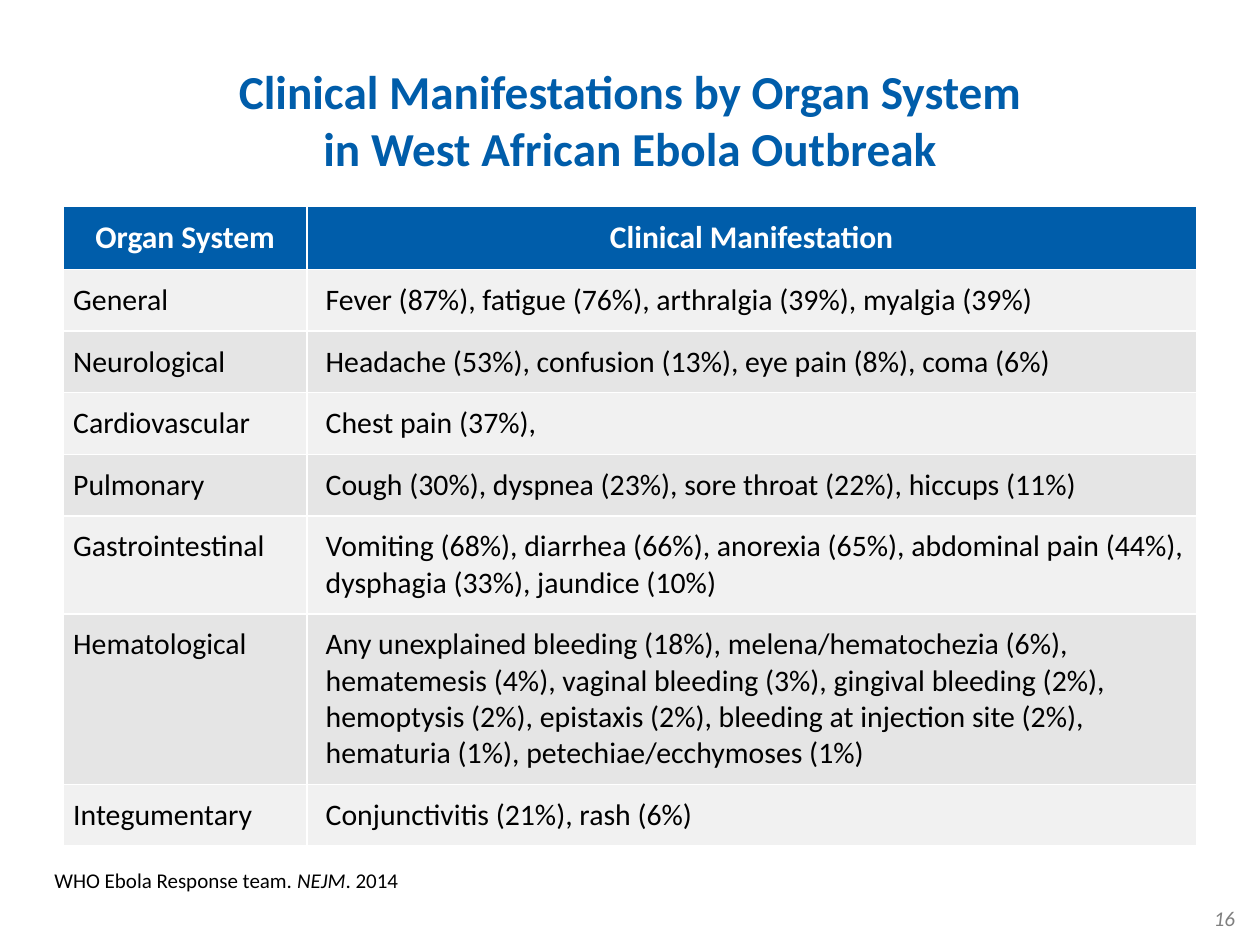
from lxml import etree
from pptx import Presentation
from pptx.dml.color import RGBColor
from pptx.enum import text as t
from pptx.oxml import ns
from pptx.util import Pt

BLUE = RGBColor(0x00, 0x5D, 0xAA)
WHITE = RGBColor(0xFF, 0xFF, 0xFF)
BLACK = RGBColor(0, 0, 0)
GRAY = RGBColor(0x7F, 0x7F, 0x7F)
BANDS = RGBColor(0xE5, 0xE5, 0xE5), RGBColor(0xCC, 0xCC, 0xCC)

HEAD = "Organ System", "Clinical Manifestation"
ROWS = [
    ("General", "Fever (87%), fatigue (76%), arthralgia (39%), myalgia (39%)"),
    ("Neurological", "Headache (53%), confusion (13%), eye pain (8%), coma (6%)"),
    ("Cardiovascular", "Chest pain (37%),"),
    ("Pulmonary", "Cough (30%), dyspnea (23%), sore throat (22%), hiccups (11%)"),
    ("Gastrointestinal", "Vomiting (68%), diarrhea (66%), anorexia (65%), "
     "abdominal pain (44%), dysphagia (33%), jaundice (10%)"),
    ("Hematological", "Any unexplained bleeding (18%), melena/hematochezia (6%), "
     "hematemesis (4%), vaginal bleeding (3%), gingival bleeding (2%), "
     "hemoptysis (2%), epistaxis (2%), bleeding at injection site (2%), "
     "hematuria (1%), petechiae/ecchymoses (1%)"),
    ("Integumentary", "Conjunctivitis (21%), rash (6%)"),
]


def style(font, size, color, **more):
    values = dict(name="Calibri", size=Pt(size), **more)
    for key, value in values.items():
        setattr(font, key, value)
    font.color.rgb = color


def add_title(slide, box, words):
    title = slide.shapes.title
    title.left, title.top, title.width, title.height = map(Pt, box)
    frame = title.text_frame
    frame.text = words
    frame.auto_size = t.MSO_AUTO_SIZE.NONE
    frame.vertical_anchor = t.MSO_ANCHOR.MIDDLE
    para = frame.paragraphs[0]
    para.alignment = t.PP_ALIGN.CENTER
    style(para.font, 27, BLUE, bold=True)


def rule(cell):
    """Draw thin white lines on all four sides of a cell."""
    props = cell._tc.get_or_add_tcPr()
    for side in "LRTB":
        line = etree.SubElement(props, ns.qn(f"a:ln{side}"), w=str(Pt(1)))
        fill = etree.SubElement(line, ns.qn("a:solidFill"))
        etree.SubElement(fill, ns.qn("a:srgbClr"), val=str(WHITE))


def paint(cell, color, alpha=None):
    cell.fill.solid()
    cell.fill.fore_color.rgb = color
    if alpha:
        tint = cell._tc.tcPr.find(ns.qn("a:solidFill"))[0]
        etree.SubElement(tint, ns.qn("a:alpha"), val=str(alpha * 1000))


def add_table(slide, box, split):
    """Fill the box with a table whose first column is split wide."""
    left, top, width, height = box
    table = slide.shapes.add_table(len(ROWS) + 1, 2, *map(Pt, box)).table
    for col, wide in zip(table.columns, (split, width - split)):
        col.width = Pt(wide)
    for row in table.rows:
        row.height = Pt(height / len(table.rows))
    for r, words in enumerate([HEAD, *ROWS]):
        for c, word in enumerate(words):
            cell = table.cell(r, c)
            cell.text = word
            para = cell.text_frame.paragraphs[0]
            rule(cell)
            if r == 0:
                sides = 4.5, 4.5
                para.alignment = t.PP_ALIGN.CENTER
                style(para.font, 18, WHITE, bold=True)
                paint(cell, BLUE)
            else:
                sides = ((5.5, 0), (10.8, 4.5))[c]
                style(para.font, 17, BLACK, bold=False)
                paint(cell, BANDS[(r - 1) % 2], 50)
            cell.margin_left, cell.margin_right = map(Pt, sides)
            cell.margin_top = cell.margin_bottom = Pt(7.2)


def add_note(slide, box, runs, size, color, pad):
    """Add a text box from (words, italic) runs."""
    frame = slide.shapes.add_textbox(*map(Pt, box)).text_frame
    frame.word_wrap = True
    for side, gap in zip(("left", "top", "right", "bottom"), pad):
        setattr(frame, f"margin_{side}", Pt(gap))
    for words, slant in runs:
        run = frame.paragraphs[0].add_run()
        run.text = words
        style(run.font, size, color, italic=slant)


def main():
    deck = Presentation()
    deck.slide_width, deck.slide_height = Pt(720), Pt(540)
    slide = deck.slides.add_slide(deck.slide_layouts[5])
    add_title(slide, (24, 47, 672, 42),
              "Clinical Manifestations by Organ System\v"
              "in West African Ebola Outbreak")
    add_table(slide, (36.3, 117.6, 647.5, 236), 139)
    add_note(slide, (24, 492.5, 671, 42),
             [("WHO Ebola Response team. ", False), ("NEJM", True),
              (". 2014", False)], 12, BLACK, (7.2, 3.6, 7.2, 3.6))
    add_note(slide, (690, 514, 29, 22), [("16", True)], 12, GRAY, (3.6,) * 4)
    deck.save("out.pptx")


if __name__ == "__main__":
    main()
